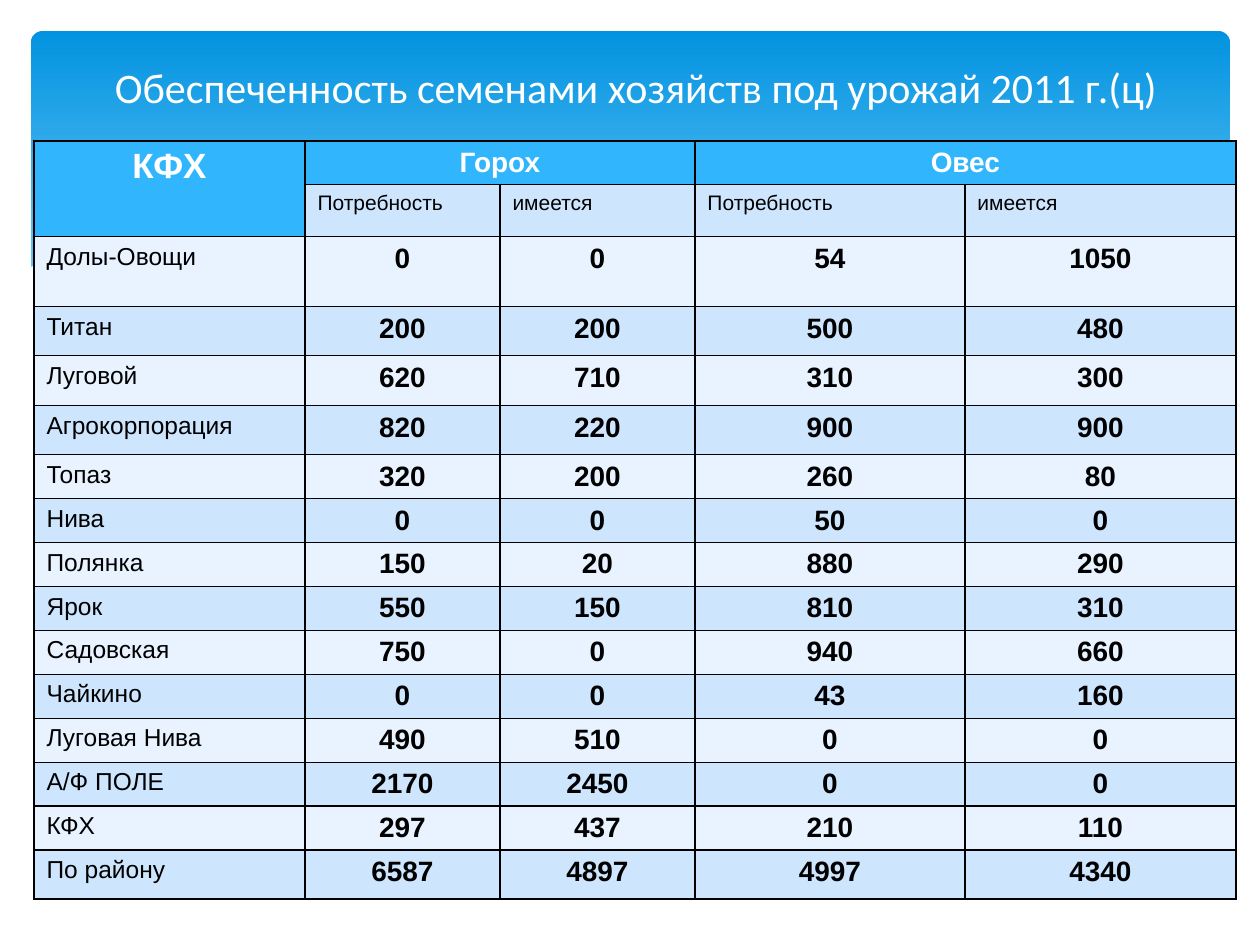
from pptx import Presentation
from pptx import util as u
from pptx.dml.color import RGBColor
from pptx.enum import shapes, text
from pptx.oxml import parse_xml
from pptx.oxml.ns import nsdecls, qn
from lxml import etree

S = 914400 / 126  # EMU in one px


def px(n):
    return u.Emu(round(n * S))


def hue(code):
    return RGBColor.from_string(code)


prs = Presentation()
prs.slide_width, prs.slide_height = px(1260), px(945)
slide = prs.slides.add_slide(prs.slide_layouts[5])
tree = slide.shapes

# Blue gradient card
card = tree.add_shape(shapes.MSO_SHAPE.ROUNDED_RECTANGLE,
                      px(31), px(31), px(1199), px(340))
card.adjustments[0] = 0.034
card.shadow.inherit = False
card.line.fill.background()
card.fill.gradient()
card.fill.gradient_angle = 270
for stop, (pos, code) in zip(card.fill.gradient_stops,
                             [(0, "0293E0"), (0.9, "83D3FE")]):
    stop.position = pos
    stop.color.rgb = hue(code)

# Waves at the foot of the card: points, fill, opacity in percent
waves = [
    ([(1229, 251), (1178, 260), (1123, 272), (1085, 281), (1014, 299),
      (949, 312), (890, 324), (833, 334), (888, 341), (939, 347),
      (998, 350), (1052, 349), (1099, 345), (1140, 339), (1178, 329),
      (1213, 318), (1230, 311), (1230, 251)], "C6E7FC", 29),
    ([(1125, 344), (1055, 334), (976, 320), (890, 302), (793, 280),
      (736, 266), (682, 255), (631, 247), (557, 238), (479, 234),
      (413, 236), (360, 241), (431, 251), (509, 266), (566, 280),
      (668, 302), (757, 321), (838, 335), (911, 345), (988, 350),
      (1056, 350), (1125, 344)], "C6E7FC", 40),
    ([(389, 246), (413, 242), (457, 238), (524, 236), (591, 238),
      (672, 244), (766, 257), (876, 276), (1002, 304), (1143, 343)],
     None, 100),
    ([(772, 324), (847, 304), (942, 281), (1053, 257), (1128, 244),
      (1182, 237), (1229, 233)], None, 100),
    ([(1231, 310), (1184, 326), (1133, 339), (1071, 347), (1000, 349),
      (937, 346), (867, 338), (789, 325), (699, 309), (599, 286),
      (527, 268), (460, 255), (397, 244), (341, 237), (290, 233),
      (243, 232), (203, 233), (166, 236), (134, 241), (107, 246),
      (74, 253), (50, 258), (29, 268), (29, 415), (1231, 415)],
     "FFFFFF", 100),
]
for pts, code, alpha in waves:
    path = tree.build_freeform(*pts[0], scale=S)
    path.add_line_segments(pts[1:], close=code is not None)
    wave = path.convert_to_shape()
    wave.shadow.inherit = False
    if code is None:
        wave.fill.background()
        wave.line.color.rgb = hue("FFFFFF")
        wave.line.width = u.Pt(0)
        continue
    wave.line.fill.background()
    wave.fill.solid()
    wave.fill.fore_color.rgb = hue(code)
    if alpha < 100:
        tint = wave._element.spPr.find(".//" + qn("a:srgbClr"))
        etree.SubElement(tint, qn("a:alpha")).set("val", str(alpha * 1000))

# Seed table
rows = [
    ["КФХ", "Горох", "", "Овес", ""],
    ["", "Потребность", "имеется", "Потребность", "имеется"],
    ["Долы-Овощи", 0, 0, 54, 1050],
    ["Титан", 200, 200, 500, 480],
    ["Луговой", 620, 710, 310, 300],
    ["Агрокорпорация", 820, 220, 900, 900],
    ["Топаз", 320, 200, 260, 80],
    ["Нива", 0, 0, 50, 0],
    ["Полянка", 150, 20, 880, 290],
    ["Ярок", 550, 150, 810, 310],
    ["Садовская", 750, 0, 940, 660],
    ["Чайкино", 0, 0, 43, 160],
    ["Луговая Нива", 490, 510, 0, 0],
    ["А/Ф ПОЛЕ", 2170, 2450, 0, 0],
    ["КФХ", 297, 437, 210, 110],
    ["По району", 6587, 4897, 4997, 4340],
]
wide = [271, 195, 195, 270, 271]
high = [43, 52, 70, 49, 50, 49] + [44] * 9 + [49]
grid = tree.add_table(len(rows), len(wide), px(34), px(141),
                      px(sum(wide)), px(sum(high))).table
for col, w in zip(grid.columns, wide):
    col.width = px(w)
for row, h in zip(grid.rows, high):
    row.height = px(h)

for r, row in enumerate(rows):
    for c, word in enumerate(row):
        cell = grid.cell(r, c)
        head = r == 0 or (r == 1 and c == 0)
        num = r > 1 and c > 0
        cell.fill.solid()
        cell.fill.fore_color.rgb = hue(
            "31B6FD" if head else "CEE5FE" if r % 2 else "E8F3FF")
        for i, side in enumerate("LRTB"):
            cell._tc.get_or_add_tcPr().insert(i, parse_xml(
                f'<a:ln{side} {nsdecls("a")} w="12700"><a:solidFill>'
                f'<a:srgbClr val="000000"/></a:solidFill></a:ln{side}>'))
        if word == "":
            continue
        cell.text_frame.text = str(word)
        para = cell.text_frame.paragraphs[0]
        if head or num:
            para.alignment = text.PP_ALIGN.CENTER
        font = para.runs[0].font
        font.name = "Arial"
        font.bold = head or num
        font.color.rgb = hue("FFFFFF" if head else "000000")
        if head:
            font.size = u.Pt(16 if c else 20)
        elif r == 1:
            font.size = u.Pt(12)
        else:
            font.size = u.Pt(16 if num else 14)

# Header spans
for top, left, low, right in [(0, 0, 1, 0), (0, 1, 0, 2), (0, 3, 0, 4)]:
    grid.cell(top, left).merge(grid.cell(low, right))

# Title, in front of the card
title = tree.title
title.left, title.top, title.width, title.height = (
    px(69), px(0), px(1134), px(173))
title.text_frame.text = "Обеспеченность семенами хозяйств под урожай 2011 г.(ц)"
title.text_frame.vertical_anchor = text.MSO_ANCHOR.MIDDLE
para = title.text_frame.paragraphs[0]
para.alignment = text.PP_ALIGN.CENTER
font = para.runs[0].font
font.name, font.size = "Calibri", u.Pt(24)
font.color.rgb = hue("FFFFFF")
tree._spTree.append(title._element)

prs.save("out.pptx")
